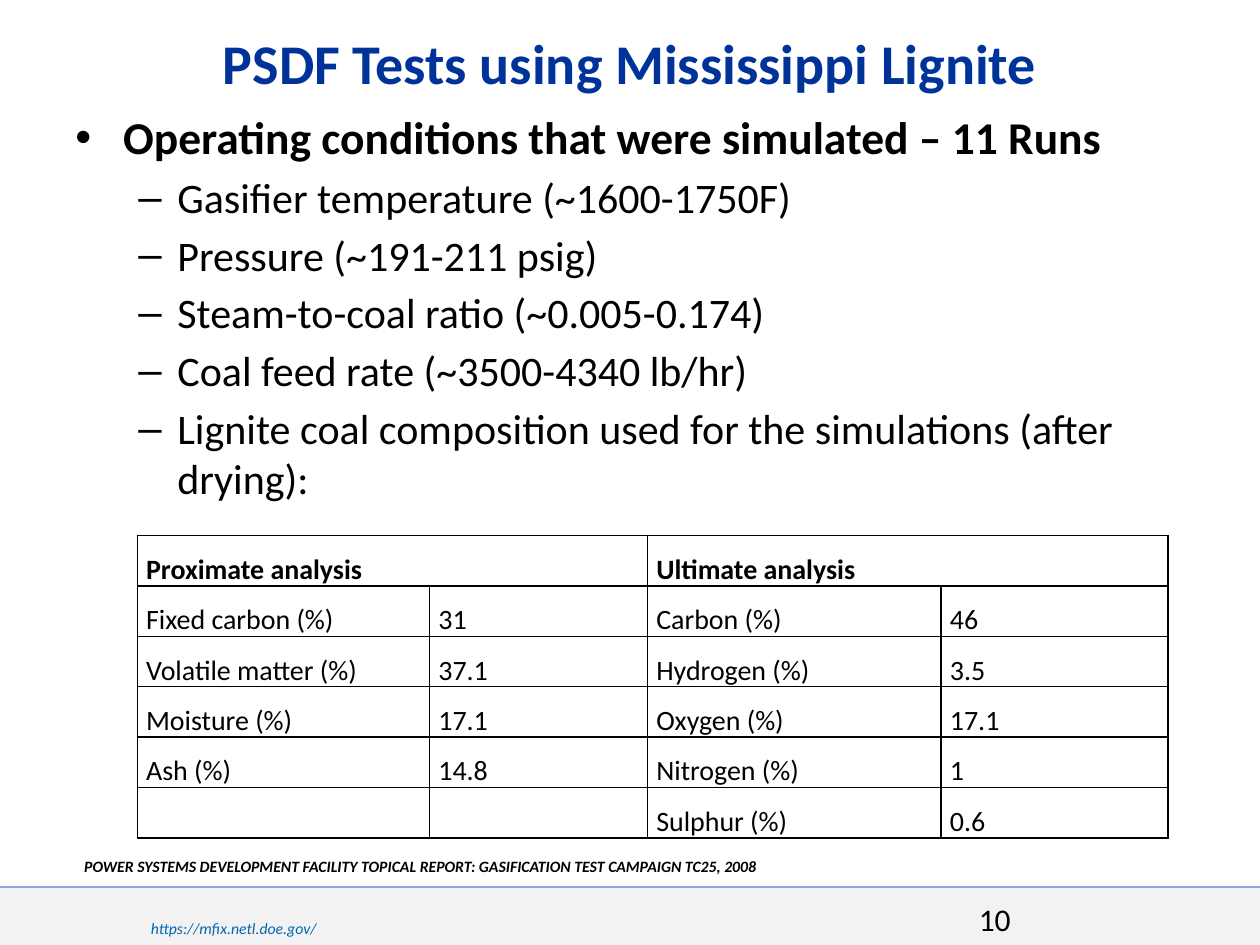
from lxml.etree import SubElement
from pptx import Presentation
from pptx.dml.color import RGBColor
from pptx.enum.shapes import MSO_CONNECTOR as CONN, MSO_SHAPE as SHAPE
from pptx.enum.text import MSO_ANCHOR as ANCHOR, PP_ALIGN as ALIGN
from pptx.oxml.ns import qn
from pptx.util import Inches, Pt

COLORS = {"black": "000000", "title": "003399", "link": "0067B1",
          "band": "F2F2F2", "rule": "8FA6DE"}

CONDITIONS = [
    "Gasifier temperature (~1600-1750F)",
    "Pressure (~191-211 psig)",
    "Steam-to-coal ratio (~0.005-0.174)",
    "Coal feed rate (~3500-4340 lb/hr)",
    "Lignite coal composition used for the simulations (after drying):",
]
ANALYSIS = [
    ("Proximate analysis", "", "Ultimate analysis", ""),
    ("Fixed carbon (%)", "31", "Carbon (%)", "46"),
    ("Volatile matter (%)", "37.1", "Hydrogen (%)", "3.5"),
    ("Moisture (%)", "17.1", "Oxygen (%)", "17.1"),
    ("Ash (%)", "14.8", "Nitrogen (%)", "1"),
    ("", "", "Sulphur (%)", "0.6"),
]


def rgb(name):
    return RGBColor.from_string(COLORS[name])


class SlideBuilder:
    font = "Calibri"

    def __init__(self, slide):
        self.s = slide

    def run(self, p, text, size, color="black", **style):
        r = p.add_run()
        r.text = text
        for key, value in {"name": self.font, "size": Pt(size), **style}.items():
            setattr(r.font, key, value)
        r.font.color.rgb = rgb(color)

    def frame(self, box, **layout):
        tf = self.s.shapes.add_textbox(*map(Inches, box)).text_frame
        for key, value in {"word_wrap": True, **layout}.items():
            setattr(tf, key, value)
        return tf

    def text(self, box, text, size, color="black", align=ALIGN.LEFT,
             anchor=ANCHOR.TOP, **style):
        p = self.frame(box, vertical_anchor=anchor).paragraphs[0]
        p.alignment = align
        self.run(p, text, size, color, **style)

    def bullets(self, box, items):
        tf = self.frame(box)
        for i, (text, size, bold, char, left, hang) in enumerate(items):
            p = tf.add_paragraph() if i else tf.paragraphs[0]
            pPr = p._p.get_or_add_pPr()
            pPr.set("marL", str(Inches(left)))
            pPr.set("indent", str(-Inches(hang)))
            SubElement(pPr, qn("a:buFont"), typeface="Arial")
            SubElement(pPr, qn("a:buChar"), char=char)
            p.space_before = Pt(4.2 if i else 0)
            self.run(p, text, size, bold=bold)

    def band(self, box, color):
        sp = self.s.shapes.add_shape(SHAPE.RECTANGLE, *map(Inches, box))
        sp.shadow.inherit = False
        sp.fill.solid()
        sp.fill.fore_color.rgb = rgb(color)
        sp.line.fill.background()

    def rule(self, y, color, width):
        line = self.s.shapes.add_connector(
            CONN.STRAIGHT, 0, Inches(y), Inches(10), Inches(y))
        line.line.color.rgb = rgb(color)
        line.line.width = Pt(width)
        SubElement(line._element.spPr, qn("a:effectLst"))

    def border(self, cell):
        tcPr = cell._tc.get_or_add_tcPr()
        for i, side in enumerate(("lnL", "lnR", "lnT", "lnB")):
            ln = tcPr.makeelement(qn(f"a:{side}"), {"w": str(Pt(1))})
            fill = SubElement(ln, qn("a:solidFill"))
            SubElement(fill, qn("a:srgbClr"), val=COLORS["black"])
            tcPr.insert(i, ln)

    def table(self, left, top, widths, row_height, rows):
        t = self.s.shapes.add_table(
            len(rows), len(widths), Inches(left), Inches(top),
            Inches(sum(widths)), Inches(row_height * len(rows))).table
        t.horz_banding = False
        for col, width in zip(t.columns, widths):
            col.width = Inches(width)
        for i, row in enumerate(rows):
            for j, text in enumerate(row):
                cell = t.cell(i, j)
                cell.fill.background()
                cell.margin_left = cell.margin_right = Inches(0.07)
                cell.margin_top = cell.margin_bottom = 0
                self.border(cell)
                if text:
                    p = cell.text_frame.paragraphs[0]
                    p.alignment = ALIGN.JUSTIFY
                    p.line_spacing = 1.5
                    self.run(p, text, 16, bold=i == 0)
        for j in range(0, len(widths), 2):
            t.cell(0, j).merge(t.cell(0, j + 1))


def main():
    prs = Presentation()
    prs.slide_width, prs.slide_height = Inches(10), Inches(7.5)
    b = SlideBuilder(prs.slides.add_slide(prs.slide_layouts[6]))

    b.band((0, 7.05, 10, 0.45), "band")
    b.rule(7.04, "rule", 1.5)
    b.text((1.1, 7.24, 2.03, 0.25), "https://mfix.netl.doe.gov/", 9, "link",
           italic=True)
    heading = ("Operating conditions that were simulated – 11 Runs",
               26, True, "•", 0.38, 0.38)
    b.bullets((0.5, 0.82, 9, 5.53),
              [heading] + [(c, 24, False, "–", 0.81, 0.31) for c in CONDITIONS])
    b.text((0.5, 0.18, 9, 0.64), "PSDF Tests using Mississippi Lignite", 32,
           "title", ALIGN.CENTER, bold=True)
    b.text((7.67, 7.09, 2.33, 0.4), "10", 18)
    b.table(1.09, 4.25, [2.32, 1.73, 2.33, 1.8], 0.4, ANALYSIS)
    b.text((0.57, 6.75, 6.42, 0.25),
           "POWER SYSTEMS DEVELOPMENT FACILITY TOPICAL REPORT: "
           "GASIFICATION TEST CAMPAIGN TC25, 2008",
           9, anchor=ANCHOR.MIDDLE, bold=True, italic=True)
    prs.save("out.pptx")


if __name__ == "__main__":
    main()
